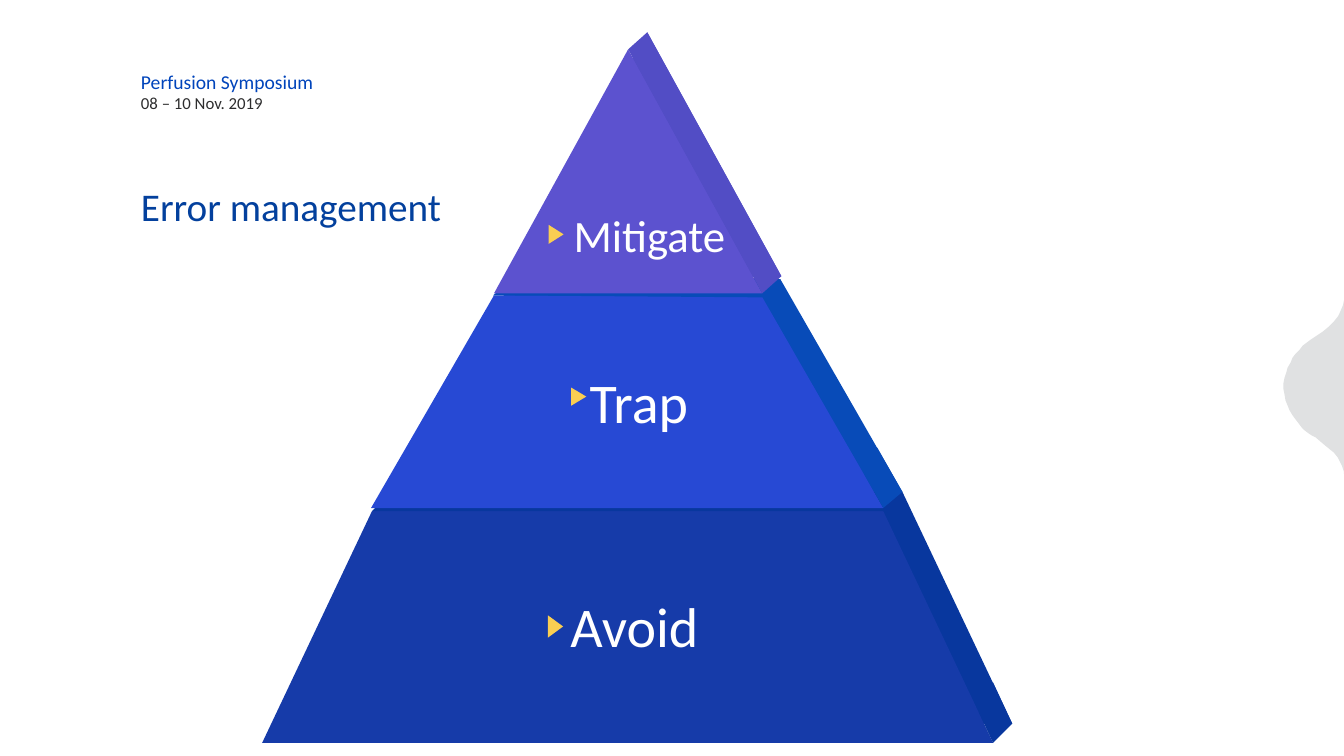
from pptx import Presentation
from pptx.dml.color import RGBColor
from pptx.enum.shapes import MSO_SHAPE
from pptx.enum.text import MSO_ANCHOR
from pptx.util import Pt

PX = 9144
WIDTH, HEIGHT = 1333, 750
FONT = "Calibri"

WHITE = RGBColor(0xFF, 0xFF, 0xFF)
GREY = RGBColor(0xE0, 0xE1, 0xE2)
INK = RGBColor(0x2D, 0x2D, 0x2E)
BLUE = RGBColor(0x00, 0x44, 0xBB)
NAVY = RGBColor(0x03, 0x40, 0x9D)
GOLD = RGBColor(0xFA, 0xCE, 0x52)
AVOID_SIDE = RGBColor(0x08, 0x37, 0x9E)
AVOID_FRONT = RGBColor(0x16, 0x3B, 0xA9)
TRAP_SIDE = RGBColor(0x08, 0x4B, 0xB8)
TRAP_FRONT = RGBColor(0x27, 0x49, 0xD4)
MIT_SIDE = RGBColor(0x52, 0x4D, 0xC5)
MIT_FRONT = RGBColor(0x5C, 0x52, 0xCF)

HEADER = [("Perfusion Symposium", 14, BLUE), ("08 – 10 Nov. 2019", 12, INK)]
HEADER_BOX = (130, 64, 192, 54)
TITLE = [("Error management", 28, NAVY)]
TITLE_BOX = (130, 180, 434, 53)

BUMP = [
    (1333, 298), (1332, 303), (1329, 310), (1327, 314), (1323, 319),
    (1318, 324), (1312, 329), (1300, 337), (1296, 340), (1292, 343),
    (1289, 347), (1285, 351), (1282, 355), (1280, 360), (1277, 365),
    (1276, 369), (1274, 375), (1273, 380), (1273, 386), (1274, 391),
    (1275, 397), (1277, 402), (1279, 407), (1282, 412), (1285, 416),
    (1288, 420), (1291, 424), (1294, 427), (1298, 430), (1301, 432),
    (1305, 434), (1312, 440), (1318, 445), (1323, 449), (1327, 454),
    (1329, 458), (1331, 462), (1333, 468), (1333, 470),
]

TIERS = [
    {
        "label": "Avoid", "size": 40, "box": (556, 582, 150, 81),
        "mark": (540, 614, 22, 15),
        "back": [(895, 488), (388, 488), (279, 718), (1004, 718)],
        "shift": (-19, 19),
        "edges": [
            [(985, 677), (971, 707), (985, 737), (1004, 718)],
            [(895, 488), (388, 488), (369, 507), (876, 507)],
        ],
        "side": AVOID_SIDE, "front": AVOID_FRONT,
    },
    {
        "label": "Trap", "size": 40, "box": (575, 360, 119, 77),
        "mark": (565, 386, 18, 15),
        "back": [(774, 277), (509, 277), (387, 488), (895, 488)],
        "shift": (-19, 16),
        "edges": [
            [(870, 444), (857, 470), (876, 504), (895, 488)],
            [(774, 277), (509, 277), (489, 293), (756, 295)],
        ],
        "side": TRAP_SIDE, "front": TRAP_FRONT,
    },
    {
        "label": "Mitigate", "size": 32, "box": (559, 201, 211, 82),
        "mark": (542, 225, 19, 15),
        "back": [(642, 32), (509, 274), (775, 274)],
        "shift": (-19, 17),
        "edges": [[(642, 32), (623, 49), (756, 291), (775, 274)]],
        "side": MIT_SIDE, "front": MIT_FRONT,
    },
]

deck = Presentation()
deck.slide_width, deck.slide_height = WIDTH * PX, HEIGHT * PX
slide = deck.slides.add_slide(deck.slide_layouts[6])
shapes = slide.shapes


def scale(box):
    return [n * PX for n in box]


def paint(shape, color):
    shape.shadow.inherit = False
    shape.fill.solid()
    shape.fill.fore_color.rgb = color
    shape.line.fill.background()


def draw_face(points, color):
    pen = shapes.build_freeform(*points[0], scale=PX)
    pen.add_line_segments(points[1:], close=True)
    paint(pen.convert_to_shape(), color)


def add_text(box, lines, wrap=False):
    frame = shapes.add_textbox(*scale(box)).text_frame
    frame.word_wrap = wrap
    frame.text = "\n".join(line[0] for line in lines)
    for para, (_, size, color) in zip(frame.paragraphs, lines):
        font = para.runs[0].font
        font.name, font.size = FONT, Pt(size)
        font.color.rgb = color
    return frame


add_text(HEADER_BOX, HEADER)
draw_face(BUMP, GREY)
title = add_text(TITLE_BOX, TITLE, wrap=True)
title.vertical_anchor = MSO_ANCHOR.BOTTOM
title.paragraphs[0].line_spacing = 0.9

for tier in TIERS:
    dx, dy = tier["shift"]
    draw_face(tier["back"], tier["side"])
    draw_face([(x + dx, y + dy) for x, y in tier["back"]], tier["front"])
    for edge in tier["edges"]:
        draw_face(edge, tier["side"])
    add_text(tier["box"], [(tier["label"], tier["size"], WHITE)])
    mark = shapes.add_shape(MSO_SHAPE.ISOSCELES_TRIANGLE, *scale(tier["mark"]))
    mark.rotation = 90
    paint(mark, GOLD)

deck.save("out.pptx")
